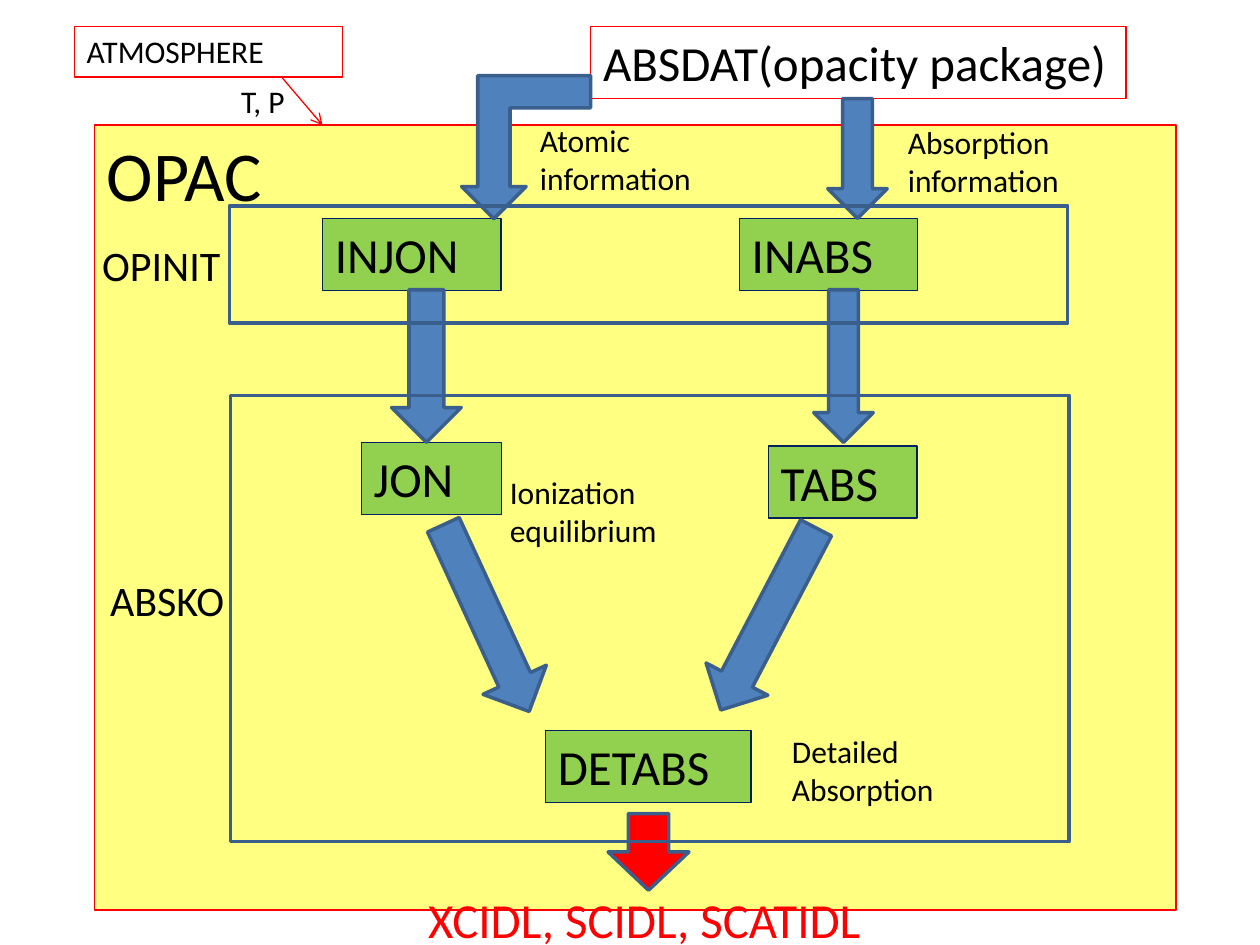
import pptx
import pptx.util
import pptx.dml.color
import pptx.enum.shapes
import pptx.enum.text
import pptx.oxml.ns
import lxml.etree
from dataclasses import dataclass

Pt = pptx.util.Pt
Shape = pptx.enum.shapes.MSO_SHAPE
Anchor = pptx.enum.text.MSO_ANCHOR
Align = pptx.enum.text.PP_ALIGN
qn = pptx.oxml.ns.qn


@dataclass(frozen=True)
class Theme:
    font: str = "Calibri"
    black: str = "000000"
    red: str = "FF0000"
    yellow: str = "FFFF00"
    green: str = "92D050"
    navy: str = "002060"
    blue: str = "4F81BD"
    steel: str = "3A5F8C"
    title: float = 40
    module: float = 28
    stage: float = 24
    note: float = 18
    thin: float = 0.75
    thick: float = 2


theme = Theme()


def write_text(box, text, size=theme.note, color=theme.black):
    frame = box.text_frame
    frame.word_wrap = True
    frame.vertical_anchor = Anchor.TOP
    for index, line in enumerate(text.split("\n")):
        para = frame.paragraphs[0] if index == 0 else frame.add_paragraph()
        para.alignment = Align.LEFT
        span = para.add_run()
        span.text = line
        span.font.name = theme.font
        span.font.size = Pt(size)
        span.font.color.rgb = pptx.dml.color.RGBColor.from_string(color)


def draw_shape(kind, left, top, width, height, line, weight, fill=None):
    shape = page.shapes.add_shape(kind, Pt(left), Pt(top), Pt(width), Pt(height))
    shape.shadow.inherit = False
    if fill:
        shape.fill.solid()
        shape.fill.fore_color.rgb = pptx.dml.color.RGBColor.from_string(fill)
    else:
        shape.fill.background()
    shape.line.color.rgb = pptx.dml.color.RGBColor.from_string(line)
    shape.line.width = Pt(weight)
    return shape


deck = pptx.Presentation()
deck.slide_width, deck.slide_height = Pt(720), Pt(540)
page = deck.slides.add_slide(deck.slide_layouts[6])

panel = draw_shape(Shape.RECTANGLE, 54, 71.5, 618, 448.5, theme.red, theme.thin, theme.yellow)
panel_color = panel.fill._xPr.find(qn("a:solidFill"))[0]
lxml.etree.SubElement(panel_color, qn("a:alpha")).set("val", "49000")
write_text(panel, "OPAC", size=theme.title)

modules = [
    ("INJON", 184.3, 124.7, 102),
    ("INABS", 422.5, 124.7, 102),
    ("JON", 206.5, 252.8, 80),
    ("TABS", 439, 254.8, 85),
    ("DETABS", 311.7, 417.5, 117.5),
]
for name, left, top, width in modules:
    module = draw_shape(Shape.RECTANGLE, left, top, width, 41.2, theme.navy, theme.thin, theme.green)
    write_text(module, name, size=theme.module)

sources = [
    ("ABSDAT(opacity package)", 337.5, 306, 41.2, theme.module),
    ("ATMOSPHERE", 42.5, 153.3, 29.1, theme.note),
]
for name, left, width, height, size in sources:
    source = draw_shape(Shape.RECTANGLE, left, 15, width, height, theme.red, theme.thin)
    write_text(source, name, size=size)

arrows = [
    (Shape.DOWN_ARROW, 473, 56.3, 34, 68.5, 0, theme.blue),
    (Shape.BENT_UP_ARROW, 263.8, 43.2, 73.7, 81.8, 180, theme.blue),
    (Shape.DOWN_ARROW, 223.8, 165.6, 39.8, 87.2, 0, theme.blue),
    (Shape.DOWN_ARROW, 465, 165.6, 34, 87.2, 0, theme.blue),
    (Shape.DOWN_ARROW, 258, 294.5, 39.8, 117.4, 335.3, theme.blue),
    (Shape.DOWN_ARROW, 419.2, 295, 39.8, 117.4, 27.6, theme.blue),
    (Shape.DOWN_ARROW, 347.5, 465, 46.2, 43.7, 0, theme.red),
]
for kind, left, top, width, height, turn, fill in arrows:
    arrow = draw_shape(kind, left, top, width, height, theme.steel, theme.thick, fill)
    arrow.rotation = turn

for left, top, height in [(131.8, 225.9, 255.1), (131.2, 117.6, 67)]:
    draw_shape(Shape.RECTANGLE, left, top, 479, height, theme.steel, theme.thick)

link = page.shapes.add_connector(
    pptx.enum.shapes.MSO_CONNECTOR.STRAIGHT, Pt(161.3), Pt(44.5), Pt(184.3), Pt(71.5))
link.line.color.rgb = pptx.dml.color.RGBColor.from_string(theme.red)
link.line.width = Pt(theme.thin)
lxml.etree.SubElement(link.line._get_or_add_ln(), qn("a:tailEnd")).set("type", "arrow")
lxml.etree.SubElement(link._element.spPr, qn("a:effectLst"))

labels = [
    ("Atomic\ninformation", 301.5, 65.5, 127.5, 51, theme.note, theme.black),
    ("Absorption\ninformation", 511.7, 67, 127.5, 51, theme.note, theme.black),
    ("Ionization equilibrium", 284.3, 266.7, 127.5, 51, theme.note, theme.black),
    ("Detailed Absorption", 445.5, 415, 127.5, 51, theme.note, theme.black),
    ("OPINIT", 51.3, 133.5, 102, 36.4, theme.stage, theme.black),
    ("ABSKO", 55.8, 325, 85, 36.4, theme.stage, theme.black),
    ("T, P", 130.8, 43.5, 42, 29.1, theme.note, theme.black),
    (" XCIDL, SCIDL, SCATIDL", 231.3, 504.8, 325.5, 41.2, theme.module, theme.red),
]
for text, left, top, width, height, size, color in labels:
    label = page.shapes.add_textbox(Pt(left), Pt(top), Pt(width), Pt(height))
    write_text(label, text, size=size, color=color)

deck.save("out.pptx")
